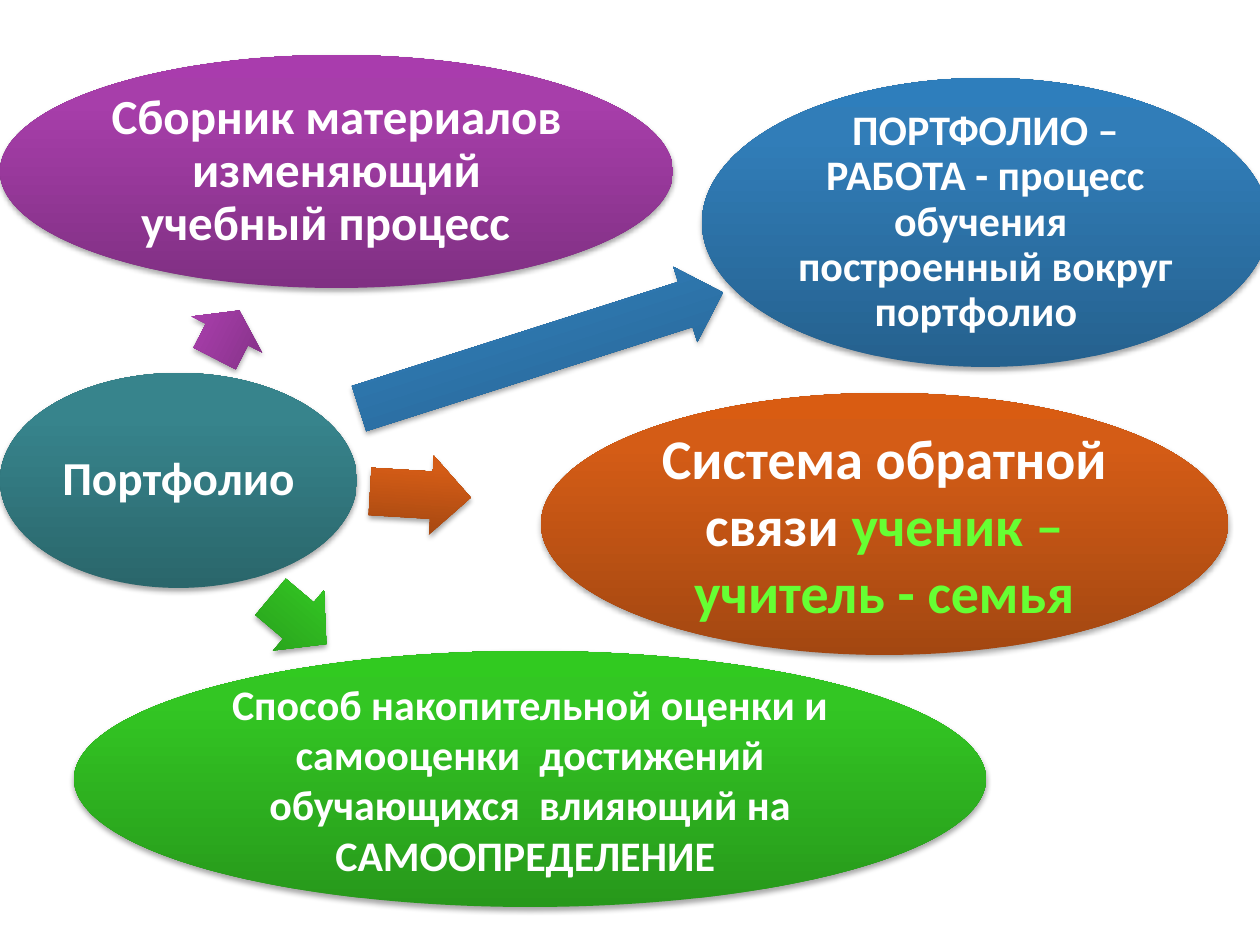
from copy import deepcopy

from lxml import etree
from pptx import Presentation
from pptx.dml.color import RGBColor
from pptx.enum.shapes import MSO_SHAPE
from pptx.enum.text import MSO_ANCHOR, PP_ALIGN
from pptx.oxml.ns import qn
from pptx.util import Emu, Pt

ELLIPSE, ARROW = MSO_SHAPE.OVAL, MSO_SHAPE.RIGHT_ARROW
MIDDLE, CENTER = MSO_ANCHOR.MIDDLE, PP_ALIGN.CENTER
PX = 914400 / 126
BLANK_LAYOUT = 6
ARROW_HEIGHT = 79

# Gradients run from bottom to top
THEME = {
    "font": "Calibri",
    "text": "FFFFFF",
    "accent": "66FF33",
    "stops": (0, 0.8, 1),
    "teal": ("2A666B", "37848C", "36868E"),
    "purple": ("803083", "A73EAA", "A93CAD"),
    "blue": ("25618E", "317DB8", "2E7EBC"),
    "green": ("27981B", "33C623", "31CA20"),
    "orange": ("A34711", "D45C16", "D95C12"),
    "sizes": {"hub": 27, "collection": 28, "body": 24, "feedback": 32},
}

# Ellipse: box in px, text runs with their colour, type size, line spacing, inset in px
# Arrow: left, top, width in px, rotation in degrees
HUB = {"color": "teal", "box": (0, 373, 357, 215), "size": "hub", "spacing": 0.9,
       "inset": 5, "runs": [("Портфолио", "text")]}
TOPICS = [
    {"color": "purple", "box": (0, 55, 673, 233), "size": "collection", "spacing": 0.9,
     "inset": 5, "arrow": (200, 295, 54, 297.2),
     "runs": [("Сборник материалов изменяющий учебный процесс  ", "text")]},
    {"color": "blue", "box": (702, 78, 567, 289), "size": "body", "spacing": 0.9,
     "inset": 4, "arrow": (350, 311, 382, 342.3),
     "runs": [("ПОРТФОЛИО – РАБОТА - процесс обучения  построенный вокруг портфолио  ",
               "text")]},
    {"color": "green", "box": (74, 651, 912, 256), "size": "body", "spacing": 1.0,
     "inset": 4, "arrow": (262, 581, 73, 40.2),
     "runs": [("Способ накопительной оценки и самооценки  достижений "
               "обучающихся  влияющий на САМООПРЕДЕЛЕНИЕ ", "text")]},
    {"color": "orange", "box": (541, 393, 687, 262), "size": "feedback", "spacing": 1.0,
     "inset": 5, "arrow": (370, 455, 101, 3.5),
     "runs": [("Система обратной связи ", "text"),
              ("ученик – учитель - семья", "accent")]},
]


def px(value):
    return Emu(round(value * PX))


def set_all(target, values):
    for name, value in values.items():
        setattr(target, name, value)


def add_shadow(shape):
    shape.shadow.inherit = False
    effects = shape._element.spPr.find(qn("a:effectLst"))
    shadow = etree.SubElement(effects, qn("a:outerShdw"), blurRad=str(Pt(3.1)),
                              dist=str(Pt(1.8)), dir="5400000", rotWithShape="0")
    color = etree.SubElement(shadow, qn("a:srgbClr"), val="000000")
    etree.SubElement(color, qn("a:alpha"), val="35000")


def add_gradient_shape(slide, kind, box, color):
    shape = slide.shapes.add_shape(kind, *map(px, box))
    shape.fill.gradient()
    shape.fill.gradient_angle = 90
    stop_list = shape._element.spPr.find(".//" + qn("a:gsLst"))
    stop_list.append(deepcopy(stop_list[-1]))
    for stop, position, value in zip(shape.fill.gradient_stops, THEME["stops"], THEME[color]):
        stop.position = position
        stop.color.rgb = RGBColor.from_string(value)
    shape.line.fill.background()
    add_shadow(shape)
    return shape


def add_ellipse(slide, item):
    shape = add_gradient_shape(slide, ELLIPSE, item["box"], item["color"])
    frame = shape.text_frame
    inset = px(item["inset"])
    set_all(frame, {"word_wrap": True, "vertical_anchor": MIDDLE,
                    "margin_left": inset, "margin_right": inset,
                    "margin_top": inset, "margin_bottom": inset})
    paragraph = frame.paragraphs[0]
    set_all(paragraph, {"alignment": CENTER, "line_spacing": item["spacing"]})
    for text, color in item["runs"]:
        run = paragraph.add_run()
        run.text = text
        set_all(run.font, {"name": THEME["font"], "bold": True,
                           "size": Pt(THEME["sizes"][item["size"]])})
        run.font.color.rgb = RGBColor.from_string(THEME[color])


def add_arrow(slide, item):
    left, top, width, rotation = item["arrow"]
    shape = add_gradient_shape(slide, ARROW, (left, top, width, ARROW_HEIGHT), item["color"])
    shape.rotation = rotation
    shape.adjustments[0] = 0.6
    shape.adjustments[1] = 0.5


def main():
    presentation = Presentation()
    set_all(presentation, {"slide_width": px(1260), "slide_height": px(945)})
    slide = presentation.slides.add_slide(presentation.slide_layouts[BLANK_LAYOUT])

    # Central idea, then each topic with the arrow that leads to it
    add_ellipse(slide, HUB)
    for topic in TOPICS:
        add_arrow(slide, topic)
        add_ellipse(slide, topic)

    presentation.save("out.pptx")


if __name__ == "__main__":
    main()
